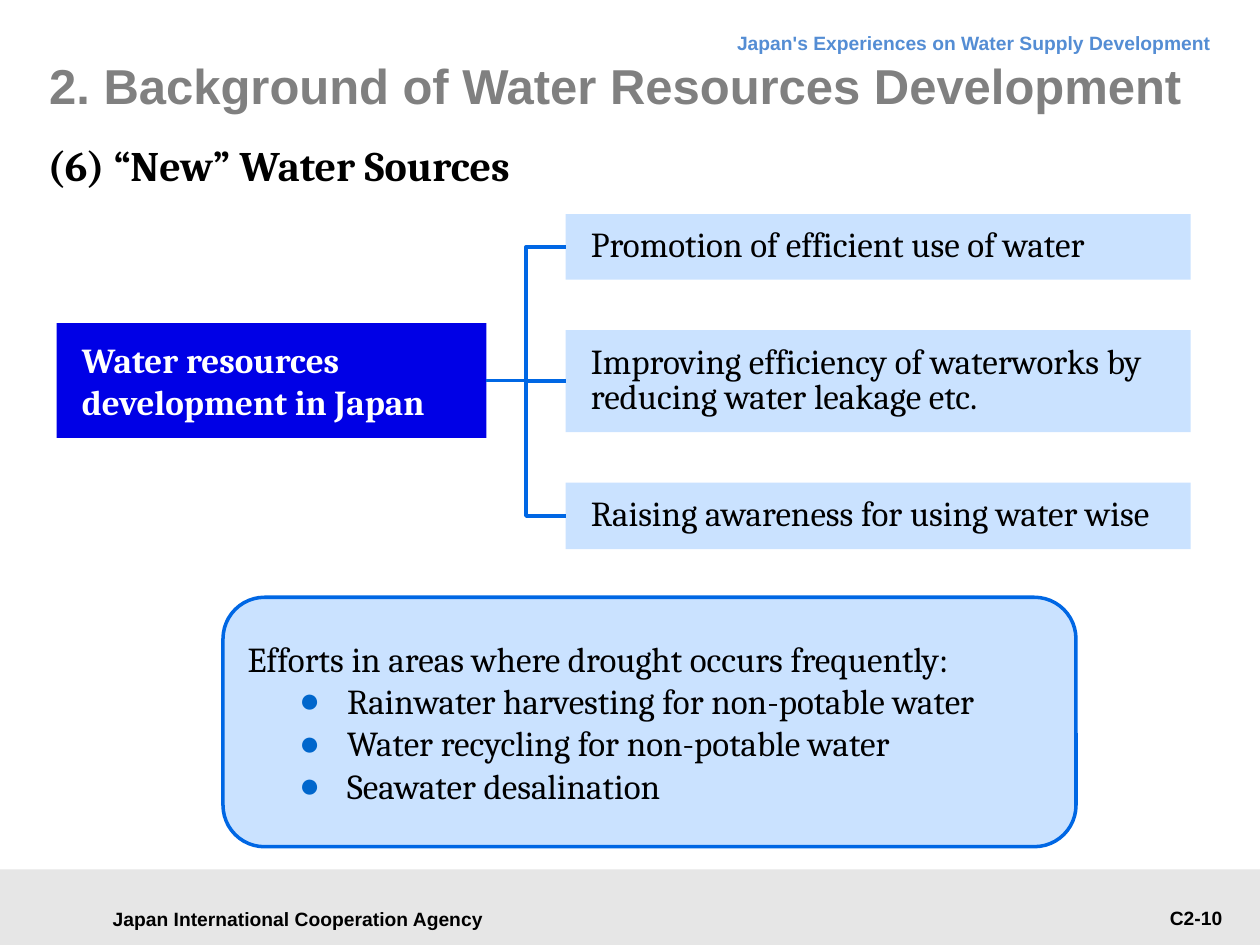
from dataclasses import dataclass

from lxml import etree
from pptx import Presentation
from pptx.dml.color import RGBColor
from pptx.enum.shapes import MSO_CONNECTOR, MSO_SHAPE
from pptx.enum.text import MSO_ANCHOR, PP_ALIGN
from pptx.oxml.ns import qn
from pptx.util import Inches, Pt

RECT, ROUNDED = MSO_SHAPE.RECTANGLE, MSO_SHAPE.ROUNDED_RECTANGLE
ELBOW = MSO_CONNECTOR.ELBOW
TOP, MIDDLE = MSO_ANCHOR.TOP, MSO_ANCHOR.MIDDLE
LEFT, CENTER, RIGHT = PP_ALIGN.LEFT, PP_ALIGN.CENTER, PP_ALIGN.RIGHT
LEFT_SIDE, RIGHT_SIDE = 1, 3


@dataclass(frozen=True)
class Theme:
    sans: str = "Arial"
    serif: str = "Cambria"
    black: str = "000000"
    white: str = "FFFFFF"
    title_grey: str = "808080"
    footer_grey: str = "E6E6E6"
    header_blue: str = "548DD4"
    root_blue: str = "0000E6"
    pale_blue: str = "CAE2FF"
    line_blue: str = "0067E4"
    bullet_blue: str = "0066CC"
    small: int = 11
    body: int = 20
    heading: int = 24
    title: int = 28
    line: int = 2


THEME = Theme()
SMALL = dict(name=THEME.sans, size=THEME.small, bold=True, color=THEME.black)
HEADER = {**SMALL, "color": THEME.header_blue}
TITLE = dict(name=THEME.sans, size=THEME.title, bold=True, color=THEME.title_grey)
HEADING = dict(name=THEME.serif, size=THEME.heading, bold=True, color=THEME.black)
BODY = dict(name=THEME.serif, size=THEME.body, bold=False, color=THEME.black)
ROOT = {**BODY, "bold": True, "color": THEME.white}

DEFAULT_INSETS = (0.1, 0.05, 0.1, 0.05)
NODE_INSETS = (0.2, 0.12, 0.01, 0.12)


def rgb(value):
    return RGBColor.from_string(value)


def format_para(para, style, align=LEFT, spacing=None):
    para.alignment = align
    if spacing:
        para.line_spacing = Pt(spacing)
    values = {**style, "size": Pt(style["size"])}
    para.font.color.rgb = rgb(values.pop("color"))
    for key, value in values.items():
        setattr(para.font, key, value)


def set_frame(frame, anchor, insets=DEFAULT_INSETS):
    frame.word_wrap = True
    frame.vertical_anchor = anchor
    for side, inset in zip(("left", "top", "right", "bottom"), insets):
        setattr(frame, f"margin_{side}", Inches(inset))


def write(shape, text, style, align=LEFT, anchor=TOP, spacing=None, insets=DEFAULT_INSETS):
    set_frame(shape.text_frame, anchor, insets)
    para = shape.text_frame.paragraphs[0]
    para.text = text
    format_para(para, style, align, spacing)


def add_label(page, box, text, style, **layout):
    label = page.shapes.add_textbox(*map(Inches, box))
    write(label, text, style, **layout)


def add_panel(page, kind, box, fill, line=None):
    panel = page.shapes.add_shape(kind, *map(Inches, box))
    panel.shadow.inherit = False
    panel.fill.solid()
    panel.fill.fore_color.rgb = rgb(fill)
    if line:
        panel.line.color.rgb = rgb(line)
        panel.line.width = Pt(THEME.line)
    else:
        panel.line.fill.background()
    return panel


def add_branch_line(page, root, branch):
    line = page.shapes.add_connector(
        ELBOW, root.left + root.width, root.top + root.height // 2,
        branch.left, branch.top + branch.height // 2)
    line.begin_connect(root, RIGHT_SIDE)
    line.end_connect(branch, LEFT_SIDE)
    line.line.color.rgb = rgb(THEME.line_blue)
    line.line.width = Pt(THEME.line)
    etree.SubElement(line._element.spPr, qn("a:effectLst"))


def add_bullet(para):
    props = para._p.get_or_add_pPr()
    props.set("marL", str(Inches(0.79)))
    props.set("indent", str(-Inches(0.38)))
    color = etree.SubElement(props, qn("a:buClr"))
    etree.SubElement(color, qn("a:srgbClr"), val=THEME.bullet_blue)
    etree.SubElement(props, qn("a:buFont"), typeface=THEME.sans)
    etree.SubElement(props, qn("a:buChar"), char="●")


def add_footer(page, box):
    left, top, width, _ = box
    add_panel(page, RECT, box, THEME.footer_grey)
    add_label(page, (left + 0.71, top + 0.22, 3.31, 0.34),
              "Japan International Cooperation Agency", SMALL, align=CENTER, anchor=MIDDLE)
    add_label(page, (left + width - 1.77, top + 0.24, 1.57, 0.29), "C2-10", SMALL, align=RIGHT)


def add_headings(page, box):
    left, top, width, _ = box
    add_label(page, (left + width - 7.01, top, 6.99, 0.38),
              "Japan's Experiences on Water Supply Development", HEADER, align=RIGHT, spacing=18)
    add_label(page, (left + 0.11, top + 0.15, 9.25, 0.79),
              "2. Background of Water Resources Development", TITLE,
              anchor=MIDDLE, insets=(0, 0, 0, 0))
    add_label(page, (left, top + 0.93, width, 0.91), "(6) “New” Water Sources", HEADING)


def add_tree(page, box, root_text, branches):
    """Root at the left, joined to a column of branches with equal gaps."""
    left, top, width, height = box
    root_width, root_height, branch_width = 3.41, 0.91, 4.96
    gap = (height - sum(size for _, size in branches)) / (len(branches) - 1)

    root_top = top + (height - root_height) / 2 - 0.01
    root = add_panel(page, RECT, (left, root_top, root_width, root_height), THEME.root_blue)
    write(root, root_text, ROOT, anchor=MIDDLE, spacing=24, insets=NODE_INSETS)

    for text, size in branches:
        branch = add_panel(page, RECT, (left + width - branch_width, top, branch_width, size),
                           THEME.pale_blue)
        write(branch, text, BODY, anchor=MIDDLE, spacing=20, insets=NODE_INSETS)
        add_branch_line(page, root, branch)
        top += size + gap


def add_efforts(page, box, lead, efforts):
    panel = add_panel(page, ROUNDED, box, THEME.pale_blue, THEME.line_blue)
    write(panel, lead, BODY, anchor=MIDDLE)
    for effort in efforts:
        para = panel.text_frame.add_paragraph()
        para.text = effort
        add_bullet(para)
        format_para(para, BODY)


def main():
    deck = Presentation()
    deck.slide_width, deck.slide_height = Inches(10), Inches(7.5)
    page = deck.slides.add_slide(deck.slide_layouts[6])

    # Footer band and headings
    add_footer(page, (0, 6.9, 10, 0.6))
    add_headings(page, (0.28, 0.13, 9.45, 1.84))

    # Tree of new water sources: branch text and height
    add_tree(page, (0.45, 1.7, 9, 2.66), "Water resources development in Japan", [
        ("Promotion of efficient use of water", 0.52),
        ("Improving efficiency of waterworks by reducing water leakage etc.", 0.81),
        ("Raising awareness for using water wise", 0.53),
    ])

    # Efforts against drought
    add_efforts(page, (1.77, 4.74, 6.77, 1.98),
                "Efforts in areas where drought occurs frequently:", [
                    "Rainwater harvesting for non-potable water",
                    "Water recycling for non-potable water",
                    "Seawater desalination",
                ])

    deck.save("out.pptx")


if __name__ == "__main__":
    main()
